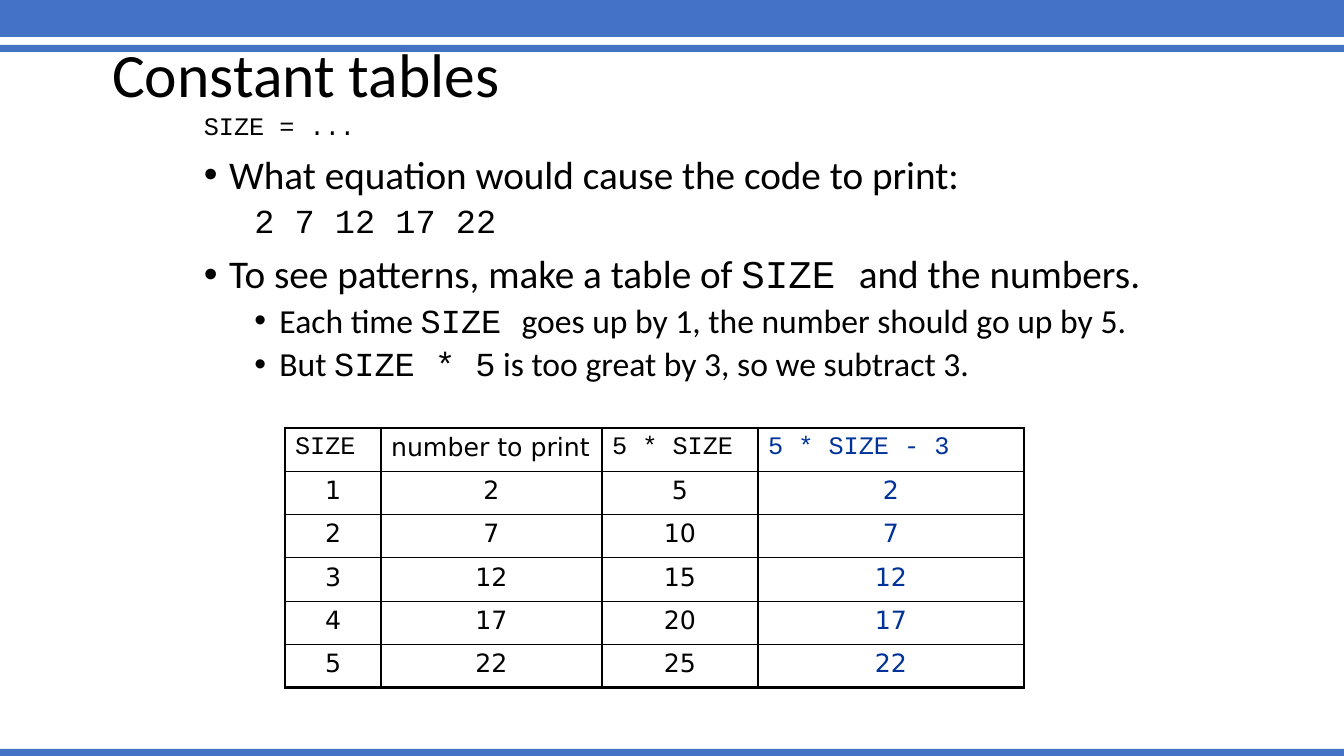
"""Build the "Constant tables" slide with its bullets and number tables."""
import pptx
import pptx.dml.color
import pptx.enum.shapes
import pptx.enum.text
import pptx.util
from lxml import etree
from pptx.oxml.ns import qn

RGBColor = pptx.dml.color.RGBColor
BLACK = RGBColor(0x00, 0x00, 0x00)
BAND_BLUE = RGBColor(0x44, 0x72, 0xC4)
ANSWER_BLUE = RGBColor(0x00, 0x33, 0x99)
BODY, CODE, DATA = "Calibri", "Courier New", "DejaVu Sans"
WIDTH, HEIGHT = 1344, 756
PX_PER_INCH = 100.8
THIN, THICK = 1, 2.25

BULLETS = [
    (0, False, 18, [("SIZE = ...", CODE)]),
    (0, True, 28, [("What equation would cause the code to print:", BODY)]),
    (1, False, 24, [("2 7 12 17 22", CODE)]),
    (0, True, 28, [("To see patterns, make a table of ", BODY), ("SIZE ", CODE),
                   ("and the numbers.", BODY)]),
    (1, True, 24, [("Each time ", BODY), ("SIZE ", CODE),
                   ("goes up by 1, the number should go up by 5.", BODY)]),
    (1, True, 24, [("But ", BODY), ("SIZE * 5", CODE),
                   (" is too great by 3, so we subtract 3.", BODY)]),
]


def px(n):
    return pptx.util.Emu(round(n * 914400 / PX_PER_INCH))


def add_run(p, text, font, size, color=BLACK):
    r = p.add_run()
    r.text = text
    r.font.name = font
    r.font.size = pptx.util.Pt(size)
    r.font.color.rgb = color


def add_band(s, top, height):
    sp = s.shapes.add_shape(pptx.enum.shapes.MSO_SHAPE.RECTANGLE,
                            0, px(top), px(WIDTH), px(height))
    sp.shadow.inherit = False
    sp.fill.solid()
    sp.fill.fore_color.rgb = BAND_BLUE
    sp.line.fill.background()


def set_title(s, text):
    sp = s.shapes.title
    sp.left, sp.top, sp.width, sp.height = px(102), px(39), px(1023), px(78)
    tf = sp.text_frame
    tf.word_wrap = True
    tf.vertical_anchor = pptx.enum.text.MSO_ANCHOR.MIDDLE
    p = tf.paragraphs[0]
    p.alignment = pptx.enum.text.PP_ALIGN.LEFT
    p.line_spacing = 0.9
    add_run(p, text, BODY, 44)


def set_indent(p, level, bullet):
    pPr = p._p.get_or_add_pPr()
    if bullet or level:
        pPr.set("marL", str(pptx.util.Inches(0.25 + 0.5 * level)))
        pPr.set("indent", str(pptx.util.Inches(-0.25)))
    if bullet:
        etree.SubElement(pPr, qn("a:buFont"), typeface="Arial")
        etree.SubElement(pPr, qn("a:buChar"), char="•")


def add_bullets(s, bullets):
    tf = s.shapes.add_textbox(px(194), px(109), px(983), px(613)).text_frame
    tf.word_wrap = True
    for i, (level, bullet, size, runs) in enumerate(bullets):
        p = tf.add_paragraph() if i else tf.paragraphs[0]
        p.level = level
        p.line_spacing = 0.9
        p.space_before = pptx.util.Pt(5 if level else 10)
        set_indent(p, level, bullet)
        for text, font in runs:
            add_run(p, text, font, size)


def set_borders(cell, **widths):
    tcPr = cell._tc.get_or_add_tcPr()
    for side in ("L", "R", "T", "B"):
        ln = etree.SubElement(tcPr, qn("a:ln" + side),
                              w=str(pptx.util.Pt(widths[side])))
        fill = etree.SubElement(ln, qn("a:solidFill"))
        etree.SubElement(fill, qn("a:srgbClr"), val=str(BLACK))


def add_number_table(s, left, widths, rows, header_fonts, color, left_edge):
    frame = s.shapes.add_table(len(rows), len(widths), px(left), px(428),
                               px(sum(widths)), px(260))
    table = frame.table
    table.first_row = table.horz_banding = False
    for column, width in zip(table.columns, widths):
        column.width = px(width)
    last_row, last_col = len(rows) - 1, len(widths) - 1
    for i, row in enumerate(rows):
        for j, value in enumerate(row):
            cell = table.cell(i, j)
            set_borders(cell, L=THIN if j else left_edge,
                        R=THICK if j == last_col else THIN,
                        T=THIN if i else THICK,
                        B=THICK if i == last_row else THIN)
            cell.fill.background()
            p = cell.text_frame.paragraphs[0]
            if i:
                p.alignment = pptx.enum.text.PP_ALIGN.CENTER
            before = etree.SubElement(p._p.get_or_add_pPr(), qn("a:spcBef"))
            etree.SubElement(before, qn("a:spcPct"), val="20000")
            add_run(p, str(value), DATA if i else header_fonts[j], 18, color)


def main():
    prs = pptx.Presentation()
    prs.slide_width, prs.slide_height = px(WIDTH), px(HEIGHT)
    s = prs.slides.add_slide(prs.slide_layouts[5])
    for top, height in ((-1, 38), (45, 7), (749, 7)):
        add_band(s, top, height)
    set_title(s, "Constant tables")
    add_bullets(s, BULLETS)
    sizes = range(1, 6)
    known = [("SIZE", "number to print", "5 * SIZE")]
    known += [(n, 5 * n - 3, 5 * n) for n in sizes]
    answer = [("5 * SIZE - 3",)] + [(5 * n - 3,) for n in sizes]
    add_number_table(s, 285, (96, 221, 156), known, (CODE, DATA, CODE),
                     BLACK, THICK)
    add_number_table(s, 758, (266,), answer, (CODE,), ANSWER_BLUE, THIN)
    prs.save("out.pptx")


if __name__ == "__main__":
    main()
